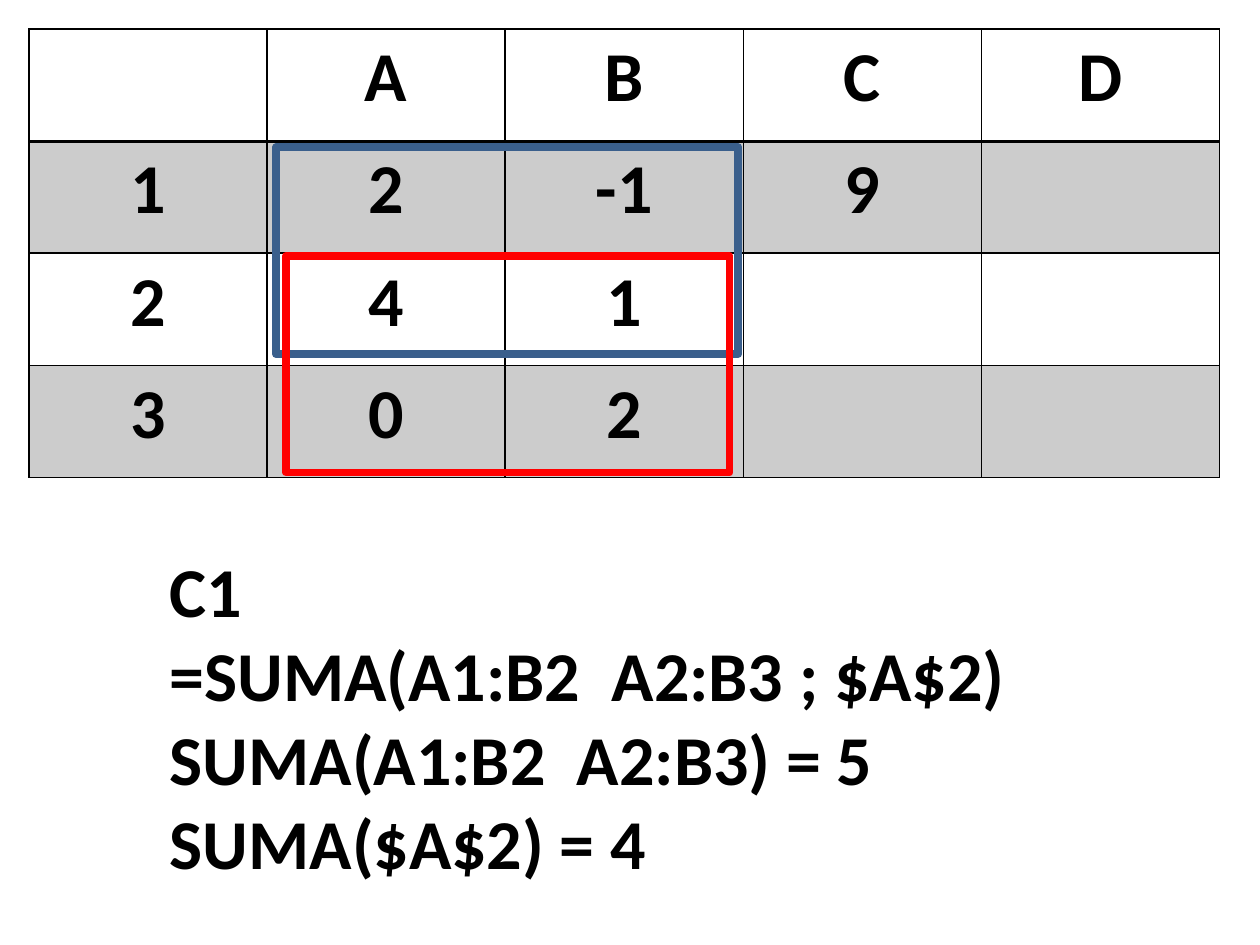
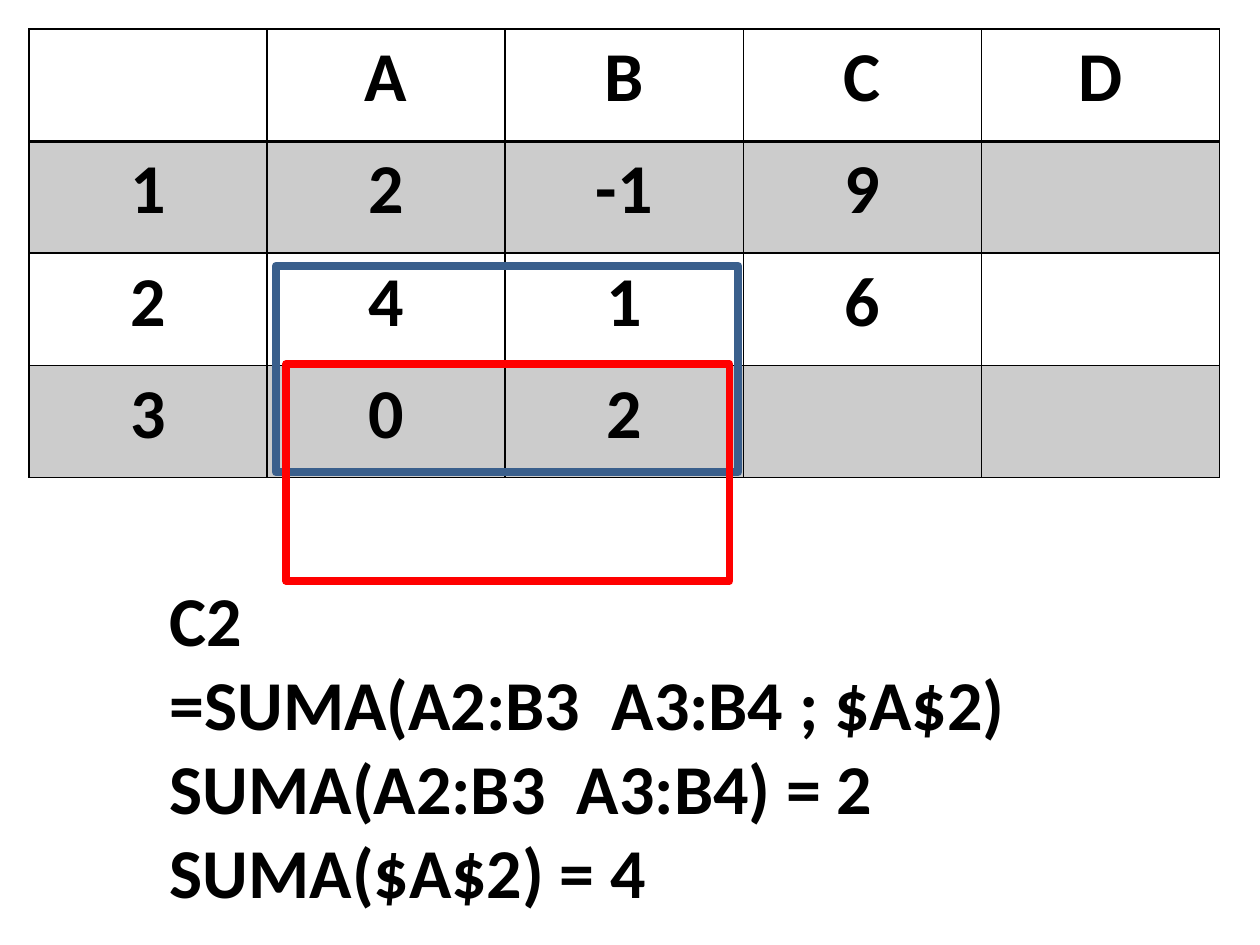
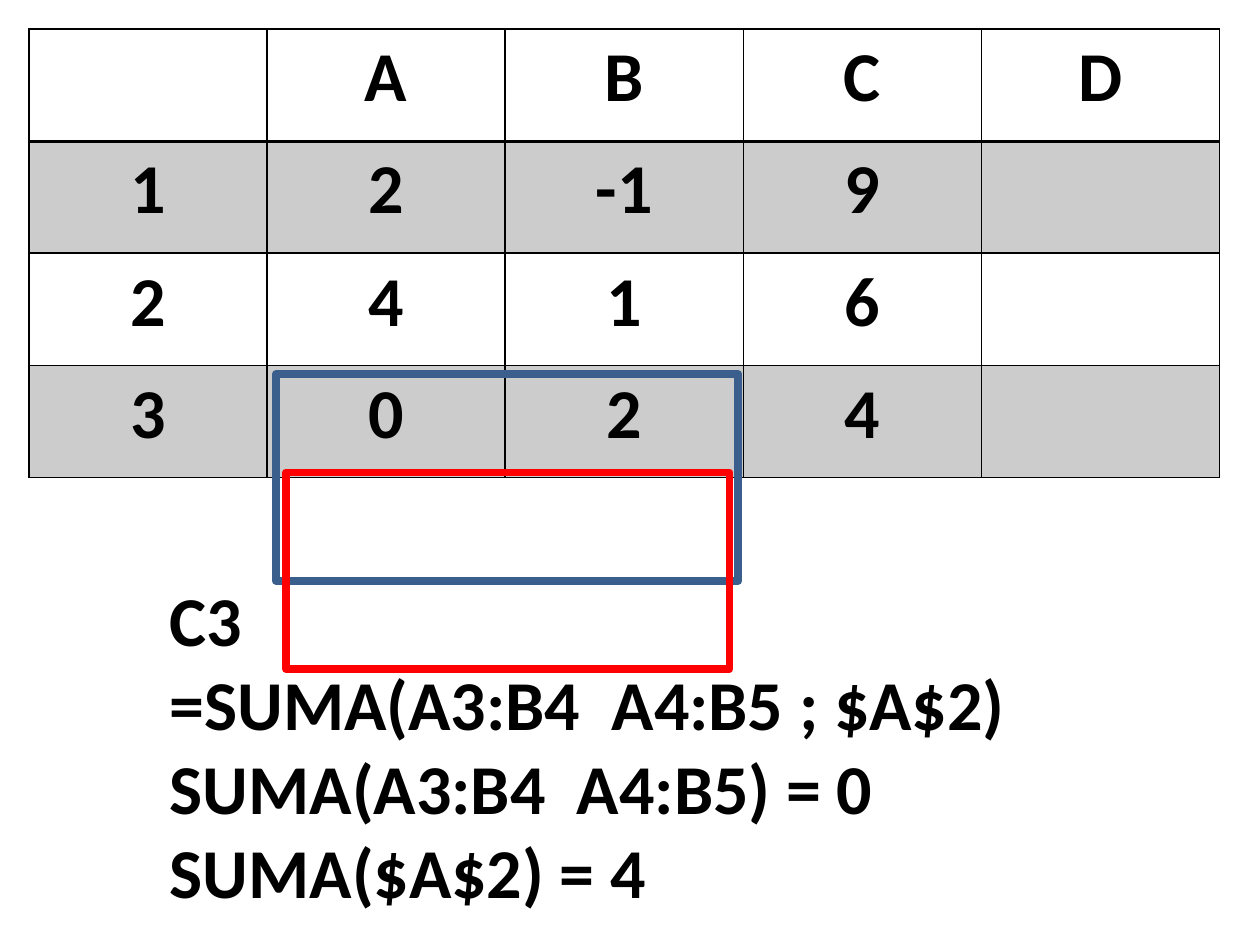
from lxml import etree
from pptx import Presentation
from pptx.dml.color import RGBColor
from pptx.enum import shapes, text
from pptx.oxml import ns
from pptx.util import Inches, Pt

COLORS = {"ink": "000000", "first_range": "3A5F8C", "second_range": "FF0000"}
FONT, FONT_SIZE = "Calibri", Pt(40)
BAND_OPACITY = 20  # percent
SHEET_BOX = (0.23, 0.23, 9.45, 3.56)

# One entry per slide: results so far, formula lines, and the top of each part
STEPS = [
    {"results": ["9", "", ""], "notes_top": 4.3,
     "first_top": 1.17, "second_top": 2.03, "second_height": 1.72,
     "notes": ["C1", "=SUMA(A1:B2  A2:B3 ; $A$2)",
               "SUMA(A1:B2  A2:B3) = 5", "SUMA($A$2) = 4"]},
    {"results": ["9", "6", ""], "notes_top": 4.53,
     "first_top": 2.11, "second_top": 2.89, "second_height": 1.72,
     "notes": ["C2", "=SUMA(A2:B3  A3:B4 ; $A$2)",
               "SUMA(A2:B3  A3:B4) = 2", "SUMA($A$2) = 4"]},
    {"results": ["9", "6", "4"], "notes_top": 4.53,
     "first_top": 2.97, "second_top": 3.75, "second_height": 1.56,
     "notes": ["C3", "=SUMA(A3:B4  A4:B5 ; $A$2)",
               "SUMA(A3:B4  A4:B5) = 0", "SUMA($A$2) = 4"]},
]


def rgb(name):
    return RGBColor.from_string(COLORS[name])


def inches(box):
    return [Inches(length) for length in box]


def add_run(paragraph, words):
    run = paragraph.add_run()
    run.text = words
    run.font.name, run.font.size, run.font.bold = FONT, FONT_SIZE, True
    run.font.color.rgb = rgb("ink")


def sub(parent, tag, **attributes):
    return etree.SubElement(parent, ns.qn(tag), **attributes)


def style_cell(cell, row):
    """Draw the grid lines, with a heavier rule under the header, and the band."""
    properties = cell._tc.get_or_add_tcPr()
    widths = {"L": 1, "R": 1, "T": 2 if row == 1 else 1, "B": 2 if row == 0 else 1}
    for side, points in widths.items():
        line = sub(properties, f"a:ln{side}", w=str(Pt(points)))
        sub(sub(line, "a:solidFill"), "a:srgbClr", val=COLORS["ink"])
    if row % 2:
        cell.fill.solid()
        cell.fill.fore_color.rgb = rgb("ink")
        band_color = properties.find(f"{ns.qn('a:solidFill')}/{ns.qn('a:srgbClr')}")
        sub(band_color, "a:alpha", val=str(BAND_OPACITY * 1000))
    else:
        cell.fill.background()


def add_sheet(slide, box, results):
    rows = [["", "A", "B", "C", "D"],
            ["1", "2", "-1", results[0], ""],
            ["2", "4", "1", results[1], ""],
            ["3", "0", "2", results[2], ""]]
    sheet = slide.shapes.add_table(len(rows), len(rows[0]), *inches(box)).table
    sheet.first_row = sheet.horz_banding = False
    for r, values in enumerate(rows):
        for c, value in enumerate(values):
            cell = sheet.cell(r, c)
            style_cell(cell, r)
            if value:
                paragraph = cell.text_frame.paragraphs[0]
                paragraph.alignment = text.PP_ALIGN.CENTER
                add_run(paragraph, value)


def add_notes(slide, box, lines):
    frame = slide.shapes.add_textbox(*inches(box)).text_frame
    frame.word_wrap = True
    frame.auto_size = text.MSO_AUTO_SIZE.SHAPE_TO_FIT_TEXT
    for i, line in enumerate(lines):
        add_run(frame.add_paragraph() if i else frame.paragraphs[0], line)


def add_range(slide, box, color):
    outline = slide.shapes.add_shape(shapes.MSO_SHAPE.RECTANGLE, *inches(box))
    outline.shadow.inherit = False
    outline.fill.background()
    outline.line.color.rgb = rgb(color)
    outline.line.width = Pt(4.5)


def add_step(slide, step):
    add_sheet(slide, SHEET_BOX, step["results"])
    add_notes(slide, (1.25, step["notes_top"], 7.89, 2.79), step["notes"])
    add_range(slide, (2.19, step["first_top"], 3.67, 1.64), "first_range")
    add_range(slide, (2.27, step["second_top"], 3.52, step["second_height"]),
              "second_range")


def main():
    deck = Presentation()
    deck.slide_width, deck.slide_height = Inches(10), Inches(7.5)
    blank = deck.slide_layouts[6]
    for step in STEPS:
        add_step(deck.slides.add_slide(blank), step)
    deck.save("out.pptx")


if __name__ == "__main__":
    main()
